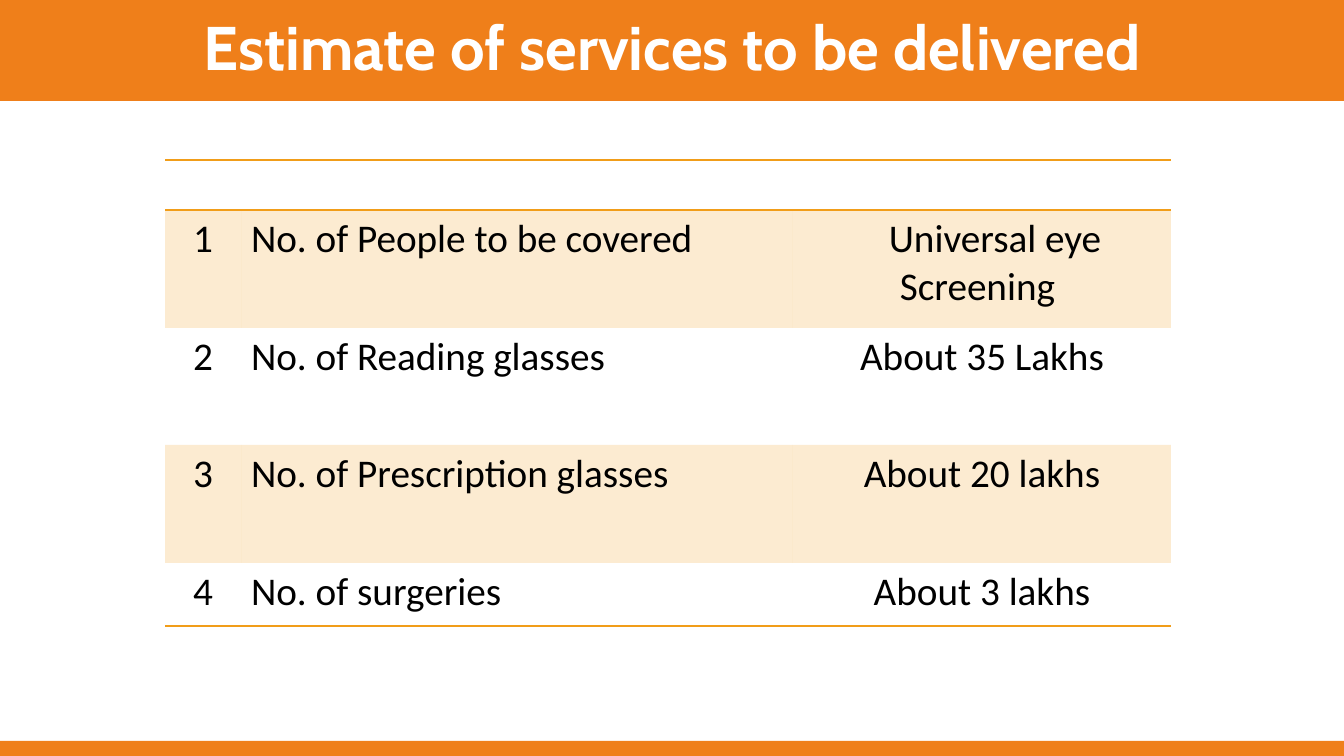
from lxml.etree import SubElement
from pptx import Presentation
from pptx.dml.color import RGBColor
from pptx.enum.shapes import MSO_SHAPE
from pptx.enum.text import MSO_ANCHOR, PP_ALIGN
from pptx.oxml import parse_xml
from pptx.oxml.ns import nsdecls, qn
from pptx.util import Pt

TITLE = "Estimate of services to be delivered"
SERVICES = [
    ("1", "No. of People to be covered", "Universal eye Screening"),
    ("2", "No. of Reading glasses", "About 35 Lakhs"),
    ("3", "No. of Prescription glasses", "About 20 lakhs"),
    ("4", "No. of surgeries", "About 3 lakhs"),
]
COLORS = {"bar": "EF7F1A", "accent": "F19D19", "white": "FFFFFF", "black": "000000"}
FORMATS = {
    "title": {"name": "Cabin", "size": Pt(44), "bold": True},
    "body": {"name": "Calibri", "size": Pt(28), "bold": False},
}
PAGE_SIZE = (1344, 756)
HEADER_BAR = (0, 0, 1344, 101)
FOOTER_BAR = (0, 741, 1344, 15)
TABLE_ORIGIN = (165, 160)
COLUMN_WIDTHS = (76, 552, 378)
ROW_HEIGHTS = (50, 118, 117, 118, 63)
ALIGNMENTS = (PP_ALIGN.CENTER, PP_ALIGN.LEFT, PP_ALIGN.CENTER)
COVERAGE_INDENT = {"marL": 0, "marR": 9, "indent": 35}
PLAIN_STYLE = "{2D5ABB26-0587-4C30-8999-92F81FD0307C}"
FILL_ALPHA = 20000


def px(value):
    return round(value * 914400 / 100.8)


def add_bar(page, place):
    bar = page.shapes.add_shape(MSO_SHAPE.RECTANGLE, *map(px, place))
    bar.shadow.inherit = False
    bar.fill.solid()
    bar.fill.fore_color.rgb = RGBColor.from_string(COLORS["bar"])
    bar.line.fill.background()
    return bar


def write(para, text, style, color, alignment):
    para.alignment = alignment
    span = para.add_run()
    span.text = text
    for name, value in FORMATS[style].items():
        setattr(span.font, name, value)
    span.font.color.rgb = RGBColor.from_string(COLORS[color])


def tint(cell):
    cell.fill.solid()
    cell.fill.fore_color.rgb = RGBColor.from_string(COLORS["accent"])
    color = cell._tc.tcPr.find(qn("a:solidFill")).find(qn("a:srgbClr"))
    SubElement(color, qn("a:alpha"), val=str(FILL_ALPHA))


def add_border(cell, side):
    cell._tc.get_or_add_tcPr().insert(0, parse_xml(
        f'<a:{side} {nsdecls("a")} w="{Pt(1)}"><a:solidFill>'
        f'<a:srgbClr val="{COLORS["accent"]}"/></a:solidFill></a:{side}>'))


def add_services(page):
    frame = page.shapes.add_table(
        len(ROW_HEIGHTS), len(COLUMN_WIDTHS), *map(px, TABLE_ORIGIN),
        px(sum(COLUMN_WIDTHS)), px(sum(ROW_HEIGHTS)))
    table = frame.table
    table.first_row = table.horz_banding = False
    table._tbl.tblPr.find(qn("a:tableStyleId")).text = PLAIN_STYLE
    for column, width in zip(table.columns, COLUMN_WIDTHS):
        column.width = px(width)
    for row, height in zip(table.rows, ROW_HEIGHTS):
        row.height = px(height)

    table.cell(0, 0).merge(table.cell(0, len(COLUMN_WIDTHS) - 1))
    for cell in table.rows[0].cells:
        cell.fill.background()
        for side in ("lnB", "lnT"):
            add_border(cell, side)

    for number, service in enumerate(SERVICES, 1):
        for column, text in enumerate(service):
            cell = table.cell(number, column)
            write(cell.text_frame.paragraphs[0], text, "body", "black", ALIGNMENTS[column])
            if number % 2:
                tint(cell)
            else:
                cell.fill.background()
            if number == len(SERVICES):
                add_border(cell, "lnB")

    coverage = table.cell(1, 2).text_frame.paragraphs[0]
    for name, value in COVERAGE_INDENT.items():
        coverage._p.get_or_add_pPr().set(name, str(px(value)))


def main():
    deck = Presentation()
    deck.slide_width, deck.slide_height = map(px, PAGE_SIZE)
    page = deck.slides.add_slide(deck.slide_layouts[6])
    add_bar(page, FOOTER_BAR)
    box = add_bar(page, HEADER_BAR).text_frame
    box.word_wrap = True
    box.vertical_anchor = MSO_ANCHOR.MIDDLE
    para = box.paragraphs[0]
    para.line_spacing = 0.9
    write(para, TITLE, "title", "white", PP_ALIGN.CENTER)
    add_services(page)
    deck.save("out.pptx")


if __name__ == "__main__":
    main()
